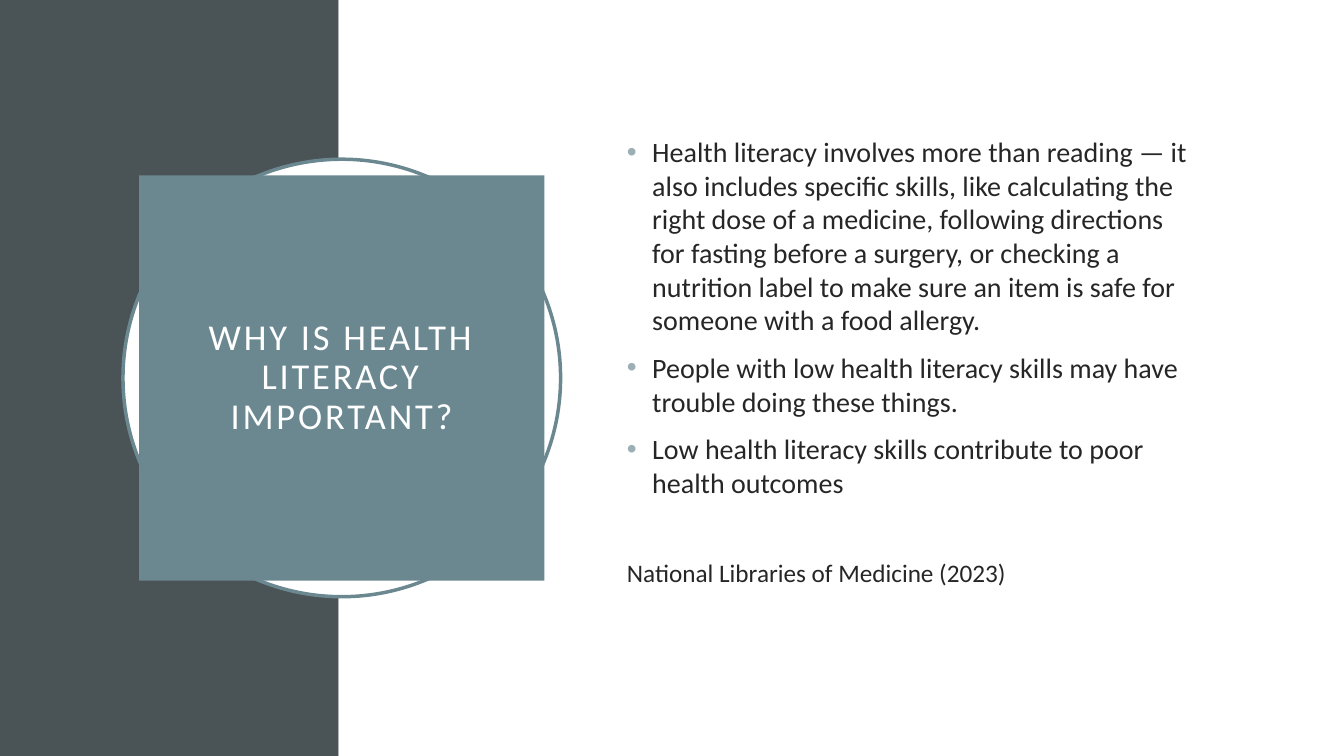
from lxml.etree import SubElement
from pptx import Presentation
from pptx.dml.color import RGBColor
from pptx.enum.shapes import MSO_SHAPE
from pptx.enum.text import MSO_ANCHOR, PP_ALIGN
from pptx.oxml.ns import qn
from pptx.util import Inches, Pt

COLORS = {
    "band": "4A5356",
    "panel": "FFFFFF",
    "accent": "6B8891",
    "bullet": "9BAFB5",
    "title": "FFFFFF",
    "body": "262626",
}
FONT = "Calibri"
SLIDE_W, SLIDE_H = 13.33, 7.5
BAND_W = 3.36

TITLE = "WHY IS HEALTH LITERACY IMPORTANT?"
POINTS = [
    "Health literacy involves more than reading — it also includes specific "
    "skills, like calculating the right dose of a medicine, following "
    "directions for fasting before a surgery, or checking a nutrition label "
    "to make sure an item is safe for someone with a food allergy.",
    "People with low health literacy skills may have trouble doing these things.",
    "Low health literacy skills contribute to poor health outcomes",
]
CITATION = "National Libraries of Medicine (2023)"


def rgb(name):
    return RGBColor.from_string(COLORS[name])


def add_block(slide, kind, box, fill, line=None):
    sp = slide.shapes.add_shape(kind, *map(Inches, box))
    sp.shadow.inherit = False
    sp.fill.solid()
    sp.fill.fore_color.rgb = rgb(fill)
    if line:
        sp.line.color.rgb = rgb(line)
        sp.line.width = Pt(2.5)
    else:
        sp.line.fill.background()
    return sp


def set_frame(sp, left, top, right, bottom):
    tf = sp.text_frame
    tf.word_wrap = True
    tf.vertical_anchor = MSO_ANCHOR.MIDDLE
    tf.margin_left, tf.margin_top = Inches(left), Inches(top)
    tf.margin_right, tf.margin_bottom = Inches(right), Inches(bottom)
    return tf


def add_text(tf, text, size=20, color="body", align=PP_ALIGN.LEFT,
             before=0, line_spacing=1.0, tracking=0, bullet=False):
    p = tf.paragraphs[0]
    if p.runs:
        p = tf.add_paragraph()
    p.alignment = align
    p.space_before = Pt(before)
    p.line_spacing = line_spacing
    r = p.add_run()
    r.text = text
    r.font.name = FONT
    r.font.size = Pt(size)
    r.font.color.rgb = rgb(color)
    if tracking:
        r.font._element.set("spc", str(tracking * 100))
    if bullet:
        pPr = p._p.get_or_add_pPr()
        pPr.set("marL", str(Inches(0.25)))
        pPr.set("indent", str(-Inches(0.25)))
        clr = SubElement(pPr, qn("a:buClr"))
        SubElement(clr, qn("a:srgbClr"), val=COLORS["bullet"])
        SubElement(pPr, qn("a:buFont"), typeface="Arial")
        SubElement(pPr, qn("a:buChar"), char="•")


def add_background(slide, width, height):
    add_block(slide, MSO_SHAPE.RECTANGLE, (0, 0, BAND_W, height), "band")
    add_block(slide, MSO_SHAPE.RECTANGLE,
              (BAND_W, 0, width - BAND_W, height), "panel")


def add_title_badge(slide, left, top, size):
    # Ring behind the square
    add_block(slide, MSO_SHAPE.OVAL, (left, top, size, size), "panel", "accent")
    # Square centred on the ring
    inset = 0.16
    side = size - 2 * inset
    square = add_block(slide, MSO_SHAPE.RECTANGLE,
                       (left + inset, top + inset, side, side), "accent")
    tf = set_frame(square, 0.2, 0.2, 0.2, 0.2)
    add_text(tf, TITLE, size=26, color="title", align=PP_ALIGN.CENTER,
             line_spacing=0.9, tracking=2)


def add_body(slide, left, top, width, height):
    sp = slide.shapes.add_textbox(*map(Inches, (left, top, width, height)))
    # The deep bottom margin lifts the centred text
    tf = set_frame(sp, 0.1, 0.05, 0.1, 0.49)
    for point in POINTS:
        add_text(tf, point, before=10, bullet=True)
    add_text(tf, CITATION, size=18, before=42)


def main():
    prs = Presentation()
    prs.slide_width, prs.slide_height = Inches(SLIDE_W), Inches(SLIDE_H)
    slide = prs.slides.add_slide(prs.slide_layouts[6])
    add_background(slide, SLIDE_W, SLIDE_H)
    add_title_badge(slide, 1.22, 1.58, 4.34)
    add_body(slide, 6.12, 0.77, 5.82, 6.07)
    prs.save("out.pptx")


if __name__ == "__main__":
    main()
